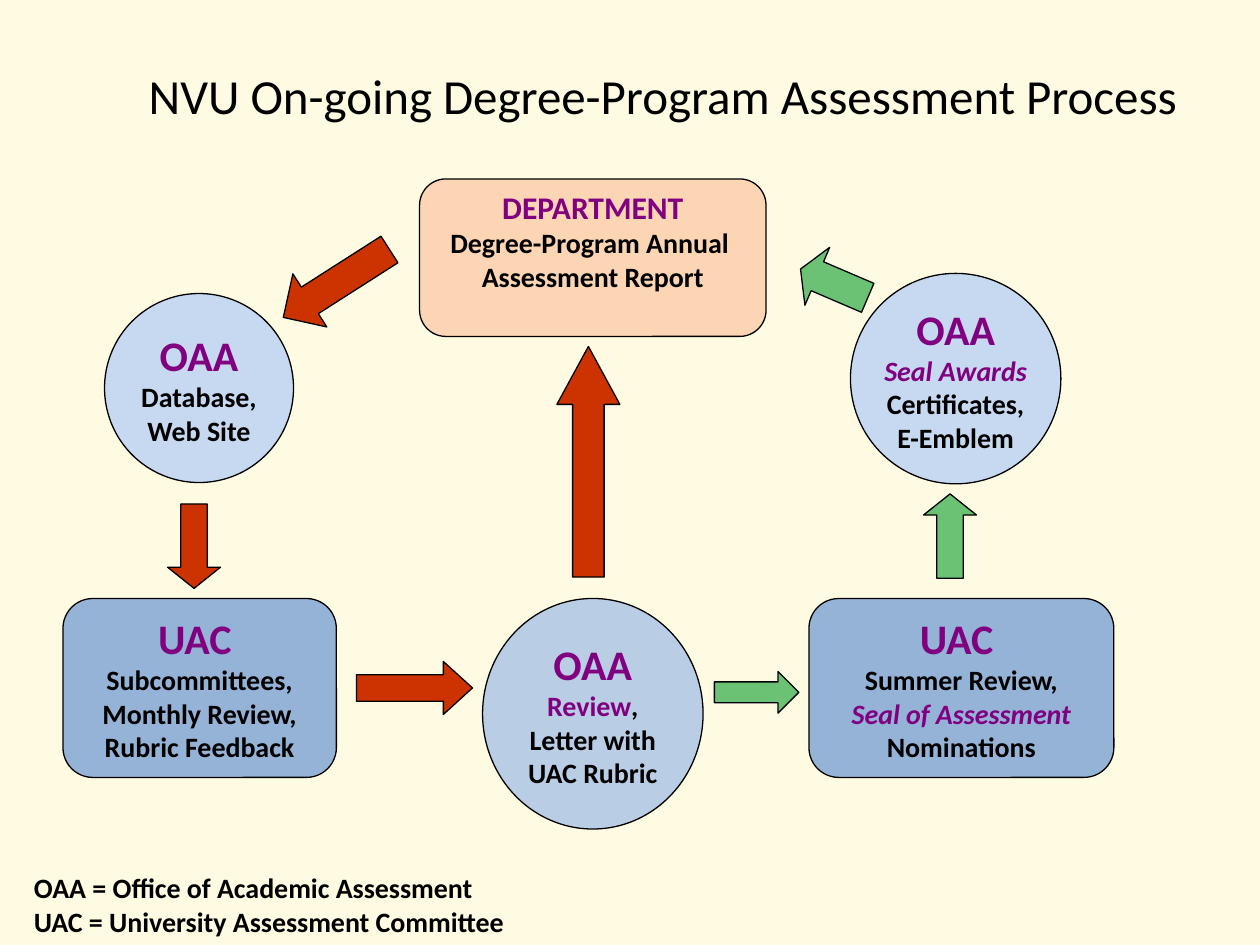
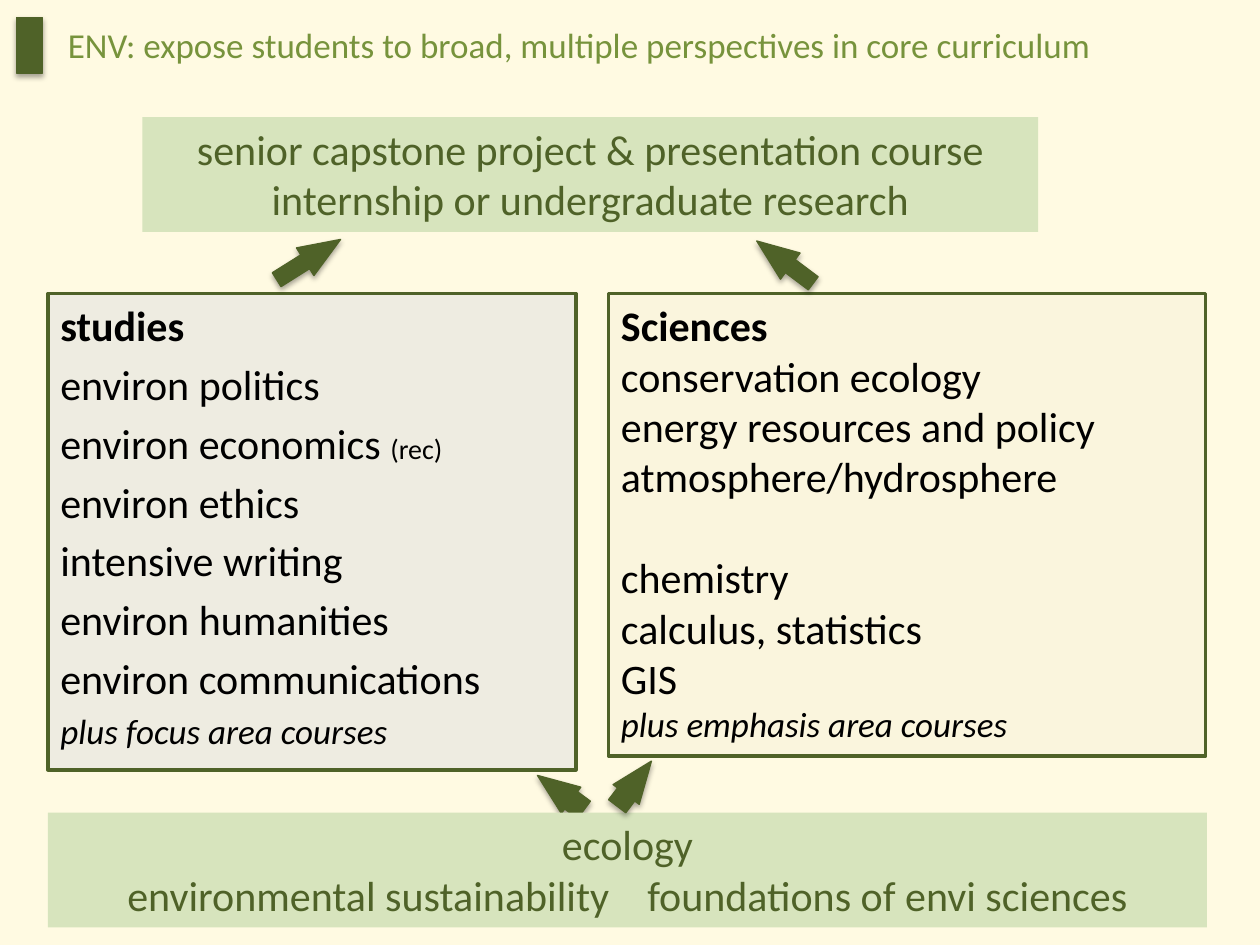
from lxml.etree import SubElement
from pptx import Presentation
from pptx.dml.color import RGBColor
from pptx.enum.shapes import MSO_SHAPE
from pptx.enum.text import MSO_ANCHOR, PP_ALIGN
from pptx.oxml.ns import qn
from pptx.util import Inches, Pt

COLORS = {
    "cream": "FFFAE2", "black": "000000", "purple": "800080",
    "peach": "FCD5B5", "pale_blue": "C6D9F1", "mid_blue": "B9CDE5", "blue": "95B3D7",
    "red": "CC3300", "green": "6CC274",
    "dark_green": "4F6228", "olive": "77933C", "pale_green": "D7E4BD",
    "grey": "EEECE1", "ivory": "FAF5DD",
}
FONT = "Calibri"


def add_block(slide, kind, box, fill, line=None, width=0.75, rotation=0, adjustments=(), shadow=False):
    shape = slide.shapes.add_shape(kind, *map(Inches, box))
    shape.rotation = rotation
    shape.fill.solid()
    shape.fill.fore_color.rgb = RGBColor.from_string(COLORS[fill])
    if line:
        shape.line.color.rgb = RGBColor.from_string(COLORS[line])
        shape.line.width = Pt(width)
    else:
        shape.line.fill.background()
    for index, value in enumerate(adjustments):
        shape.adjustments[index] = value
    shape.shadow.inherit = False
    if shadow:
        effects = shape.fill._xPr.find(qn("a:effectLst"))
        outer = SubElement(effects, qn("a:outerShdw"), blurRad=str(Pt(3.1)), dist=str(Pt(1.8)),
                           dir="5400000", rotWithShape="0")
        color = SubElement(outer, qn("a:srgbClr"), val=COLORS["black"])
        SubElement(color, qn("a:alpha"), val="35000")
    return shape


def write(shape, lines, align=PP_ALIGN.CENTER, anchor=MSO_ANCHOR.TOP, wrap=True):
    frame = shape.text_frame
    frame.word_wrap = wrap
    frame.vertical_anchor = anchor
    for index, line in enumerate(lines):
        paragraph = frame.add_paragraph() if index else frame.paragraphs[0]
        paragraph.alignment = align
        for text, size, color, style in line:
            run = paragraph.add_run()
            run.text = text
            run.font.name = FONT
            run.font.size = Pt(size)
            run.font.color.rgb = RGBColor.from_string(COLORS[color])
            run.font.bold = "b" in style
            run.font.italic = "i" in style
    return frame


presentation = Presentation()
presentation.slide_width = Inches(10)
presentation.slide_height = Inches(7.5)
slides = []
for number in range(2):
    slide = presentation.slides.add_slide(presentation.slide_layouts[6])
    slide.background.fill.solid()
    slide.background.fill.fore_color.rgb = RGBColor.from_string(COLORS["cream"])
    slides.append(slide)
process, curriculum = slides

title = process.shapes.add_textbox(Inches(0.93), Inches(0.29), Inches(8.66), Inches(0.92))
write(title, [[("NVU On-going Degree-Program Assessment Process", 28, "black", "")]],
      anchor=MSO_ANCHOR.MIDDLE)

ROUNDED, OVAL = MSO_SHAPE.ROUNDED_RECTANGLE, MSO_SHAPE.OVAL
steps = [
    (ROUNDED, (3.33, 1.42, 2.75, 1.25), "peach", "DEPARTMENT", 18,
     [[("Degree-Program Annual ", "black", "b")], [("Assessment Report", "black", "b")]]),
    (OVAL, (0.83, 2.33, 1.5, 1.5), "pale_blue", "OAA", 24,
     [[("Database,", "black", "b")], [("Web Site", "black", "b")]]),
    (ROUNDED, (0.5, 4.75, 2.17, 1.42), "blue", "UAC ", 24,
     [[("Subcommittees,", "black", "b")], [("Monthly Review,", "black", "b")],
      [("Rubric Feedback", "black", "b")]]),
    (OVAL, (3.83, 4.75, 1.75, 1.83), "mid_blue", "OAA", 24,
     [[("Review", "purple", "b"), (",", "black", "b")], [("Letter with", "black", "b")],
      [("UAC Rubric", "black", "b")]]),
    (ROUNDED, (6.42, 4.75, 2.42, 1.42), "blue", "UAC ", 24,
     [[("Summer Review,", "black", "b")], [("Seal of Assessment", "purple", "bi")],
      [("Nominations", "black", "b")]]),
    (OVAL, (6.75, 2.17, 1.67, 1.67), "pale_blue", "OAA", 24,
     [[("Seal Awards", "purple", "bi")], [("Certificates,", "black", "b")],
      [("E-Emblem", "black", "b")]]),
]
for kind, box, fill, heading, heading_size, details in steps:
    step = add_block(process, kind, box, fill, "black")
    lines = [[(heading, heading_size, "purple", "b")]]
    lines += [[(text, 16, color, style) for text, color, style in line] for line in details]
    frame = write(step, lines, anchor=MSO_ANCHOR.MIDDLE, wrap=False)
    if heading == "DEPARTMENT":
        frame.margin_bottom = Inches(0.32)

UP, DOWN = MSO_SHAPE.UP_ARROW, MSO_SHAPE.DOWN_ARROW
LEFT, RIGHT = MSO_SHAPE.LEFT_ARROW, MSO_SHAPE.RIGHT_ARROW
process_arrows = [
    (UP, (4.42, 2.75, 0.5, 1.83), "red", 0, 0.92),
    (RIGHT, (5.67, 5.33, 0.67, 0.33), "green", 0, 0.5),
    (LEFT, (6.33, 2, 0.58, 0.5), "green", 23.2, 0.29),
    (UP, (7.33, 3.92, 0.42, 0.67), "green", 0, 0.4),
    (LEFT, (2.17, 2, 1, 0.5), "red", 327.4, 0.5),
    (DOWN, (1.33, 4, 0.42, 0.67), "red", 0, 0.4),
    (RIGHT, (2.83, 5.25, 0.92, 0.42), "red", 0, 0.55),
]
for kind, box, fill, rotation, head in process_arrows:
    add_block(process, kind, box, fill, "black", rotation=rotation, adjustments=(0.5, head))

legend = process.shapes.add_textbox(Inches(0.17), Inches(6.86), Inches(4.59), Inches(0.64))
write(legend, [[("OAA = Office of Academic Assessment", 16, "black", "b")],
               [("UAC = University Assessment Committee", 16, "black", "b")]], PP_ALIGN.LEFT)

studies = ["environ politics", "environ economics ", "environ ethics", "intensive writing",
           "environ humanities", "environ communications"]
sciences = ["conservation ecology", "energy resources and policy", "atmosphere/hydrosphere",
            "chemistry", "calculus, statistics", "GIS"]
course_lists = [
    ((0.38, 2.33, 4.19, 3.78), "grey", "studies", studies, "plus focus area courses"),
    ((4.83, 2.33, 4.74, 3.67), "ivory", "Sciences", sciences, "plus emphasis area courses"),
]
for box, fill, heading, courses, closing in course_lists:
    panel = add_block(curriculum, MSO_SHAPE.RECTANGLE, box, fill, "dark_green", 2)
    lines = [[(heading, 24, "black", "b")]]
    lines += [[(course, 24, "black", "")] for course in courses]
    lines.append([(closing, 20, "black", "i")])
    if courses is studies:
        lines[2].append(("(rec)", 16, "black", ""))
    paragraphs = write(panel, lines, PP_ALIGN.LEFT).paragraphs
    if courses is studies:
        for paragraph in paragraphs[1:]:
            paragraph.space_before = Pt(0.2 * paragraph.runs[0].font.size.pt)
    else:
        paragraphs[4].space_before = Pt(28.8)

heading = curriculum.shapes.add_textbox(Inches(0.44), Inches(0.14), Inches(9.51), Inches(0.44))
write(heading, [[("ENV: expose students to broad, multiple perspectives in core curriculum",
                  20, "olive", "")]], PP_ALIGN.LEFT)

capstone = add_block(curriculum, MSO_SHAPE.RECTANGLE, (1.13, 0.93, 7.11, 0.91), "pale_green")
write(capstone, [[("senior capstone project & presentation course", 24, "dark_green", "")],
                 [("internship or undergraduate research", 24, "dark_green", "")]])

curriculum_arrows = [
    ((4.22, 6.16, 0.46, 0.26), 216.5, 0.66),
    ((2.15, 1.93, 0.6, 0.26), 327.8, 0.5),
    ((4.81, 6.09, 0.45, 0.26), 307.2, 0.66),
    ((5.95, 1.95, 0.56, 0.26), 216.8, 0.5),
]
for index, (box, rotation, shaft) in enumerate(curriculum_arrows):
    add_block(curriculum, RIGHT, box, "dark_green", "dark_green", rotation=rotation,
              adjustments=(shaft, 1.28), shadow=True)
    if index == 0:
        foundation = add_block(curriculum, MSO_SHAPE.RECTANGLE, (0.38, 6.45, 9.2, 0.91), "pale_green")
        frame = write(foundation, [
            [("ecology", 24, "dark_green", "")],
            [("environmental sustainability", 24, "dark_green", ""), (" ", 24, "dark_green", ""),
             ("foundations of envi sciences", 24, "dark_green", "")]])
        gap = frame.paragraphs[1].runs[1]
        gap._r.get_or_add_rPr().set("spc", "1630")

add_block(curriculum, MSO_SHAPE.RECTANGLE, (0.13, 0.14, 0.21, 0.44), "dark_green", "dark_green",
          shadow=True)

presentation.save("out.pptx")
